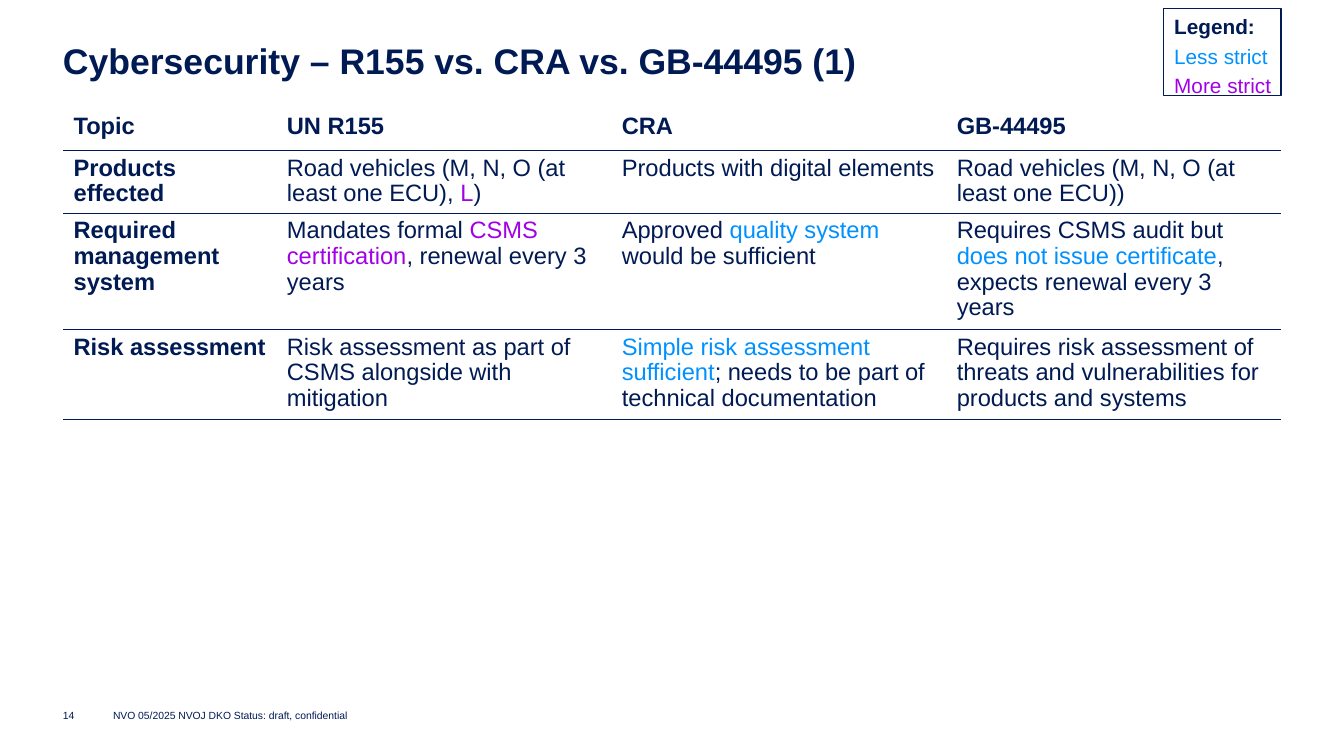
from dataclasses import dataclass

from lxml import etree
from pptx import Presentation
from pptx.dml.color import RGBColor
from pptx.enum.shapes import MSO_SHAPE
from pptx.enum.text import MSO_ANCHOR, PP_ALIGN
from pptx.oxml.ns import qn
from pptx.util import Inches, Pt

RECTANGLE = MSO_SHAPE.RECTANGLE
TOP, MIDDLE = MSO_ANCHOR.TOP, MSO_ANCHOR.MIDDLE
LEFT = PP_ALIGN.LEFT
PLAIN_TABLE_STYLE = "{2D5ABB26-0587-4C30-8999-92F81FD0307C}"


@dataclass(frozen=True)
class Theme:
    font: str = "Arial"
    ink: str = "001A54"
    less_strict: str = "0091FF"
    more_strict: str = "A200E6"
    paper: str = "FFFFFF"
    title_size: int = 24
    table_size: int = 16
    legend_size: int = 14
    footer_size: int = 7
    tight: float = 0.97
    loose: float = 1.2


THEME = Theme()
LESS, MORE = THEME.less_strict, THEME.more_strict

# A text is a string, or a list of strings and (string, colour) pairs.
TITLE = "Cybersecurity – R155 vs. CRA vs. GB-44495 (1)"
TOPICS = [
    ["Topic", "UN R155", "CRA", "GB-44495"],
    ["Products effected",
     ["Road vehicles (M, N, O (at least one ECU), ", ("L", MORE), ")"],
     "Products with digital elements",
     "Road vehicles (M, N, O (at least one ECU))"],
    ["Required management system",
     ["Mandates formal ", ("CSMS certification", MORE), ", renewal every 3 years"],
     ["Approved ", ("quality system", LESS), " would be sufficient"],
     ["Requires CSMS audit but ", ("does not issue certificate", LESS),
      ", expects renewal every 3 years"]],
    ["Risk assessment",
     "Risk assessment as part of CSMS alongside with mitigation",
     [("Simple risk assessment sufficient", LESS),
      "; needs to be part of technical documentation"],
     "Requires risk assessment of threats and vulnerabilities for products and systems"],
]
COLUMN_WIDTHS = [2, 3.14, 3.14, 3.14]
ROW_HEIGHTS = [0.39, 0.59, 1.09, 0.84]
LEGEND = [("Legend:", THEME.ink, True), ("Less strict", LESS, False),
          ("More strict", MORE, False)]
FOOTER = [("14", 0.59, 0.39),
          ("NVO 05/2025 NVOJ DKO Status: draft, confidential", 1.06, 5.04)]


def write(paragraph, text, *, size, color=THEME.ink, bold=False, spacing=None):
    paragraph.alignment = LEFT
    if spacing:
        paragraph.line_spacing = spacing
    for part in [text] if isinstance(text, str) else text:
        words, part_color = (part, color) if isinstance(part, str) else part
        run = paragraph.add_run()
        run.text = words
        run.font.name = THEME.font
        run.font.size = Pt(size)
        run.font.bold = bold
        run.font.color.rgb = RGBColor.from_string(part_color)


def set_frame(frame, *, anchor, wrap=True, left=0):
    frame.margin_left = Inches(left)
    frame.margin_top = frame.margin_right = frame.margin_bottom = 0
    frame.vertical_anchor = anchor
    frame.word_wrap = wrap


def rule_below(cell):
    """Draw a thin line along the bottom of a table cell."""
    line = etree.Element(qn("a:lnB"), w=str(Pt(0.5)))
    fill = etree.SubElement(line, qn("a:solidFill"))
    etree.SubElement(fill, qn("a:srgbClr"), val=THEME.ink)
    cell._tc.get_or_add_tcPr().insert(0, line)


def add_title(slide):
    title = slide.shapes.title
    title.left, title.top = Inches(0.59), Inches(0.39)
    title.width, title.height = Inches(11.42), Inches(0.4)
    set_frame(title.text_frame, anchor=TOP)
    write(title.text_frame.paragraphs[0], TITLE, size=THEME.title_size,
          bold=True, spacing=THEME.tight)


def add_comparison(slide):
    table = slide.shapes.add_table(
        len(TOPICS), len(COLUMN_WIDTHS), Inches(0.59), Inches(1.02),
        Inches(sum(COLUMN_WIDTHS)), Inches(sum(ROW_HEIGHTS))).table
    table.horz_banding = False
    table._tbl.tblPr.find(qn("a:tableStyleId")).text = PLAIN_TABLE_STYLE
    for column, width in zip(table.columns, COLUMN_WIDTHS):
        column.width = Inches(width)
    for row, height in zip(table.rows, ROW_HEIGHTS):
        row.height = Inches(height)
    for r, topic in enumerate(TOPICS):
        for c, text in enumerate(topic):
            cell = table.cell(r, c)
            cell.fill.solid()
            cell.fill.fore_color.rgb = RGBColor.from_string(THEME.paper)
            rule_below(cell)
            write(cell.text_frame.paragraphs[0], text, size=THEME.table_size,
                  bold=r == 0 or c == 0, spacing=THEME.tight)


def add_legend(slide):
    legend = slide.shapes.add_shape(
        RECTANGLE, Inches(10.91), Inches(0.08), Inches(1.1), Inches(0.82))
    legend.shadow.inherit = False
    legend.fill.background()
    legend.line.color.rgb = RGBColor.from_string(THEME.ink)
    legend.line.width = Pt(0.75)
    frame = legend.text_frame
    set_frame(frame, anchor=TOP, left=0.1)
    for i, (label, color, bold) in enumerate(LEGEND):
        paragraph = frame.add_paragraph() if i else frame.paragraphs[0]
        write(paragraph, label, size=THEME.legend_size, color=color, bold=bold,
              spacing=THEME.loose)


def add_footer(slide):
    for text, left, width in FOOTER:
        frame = slide.shapes.add_textbox(
            Inches(left), Inches(6.61), Inches(width), Inches(0.2)).text_frame
        set_frame(frame, anchor=MIDDLE, wrap=False)
        write(frame.paragraphs[0], text, size=THEME.footer_size)


def main():
    deck = Presentation()
    deck.slide_width, deck.slide_height = Inches(12.6), Inches(7.09)
    slide = deck.slides.add_slide(deck.slide_layouts.get_by_name("Title Only"))
    add_title(slide)
    add_comparison(slide)
    add_legend(slide)
    add_footer(slide)
    deck.save("out.pptx")


if __name__ == "__main__":
    main()
